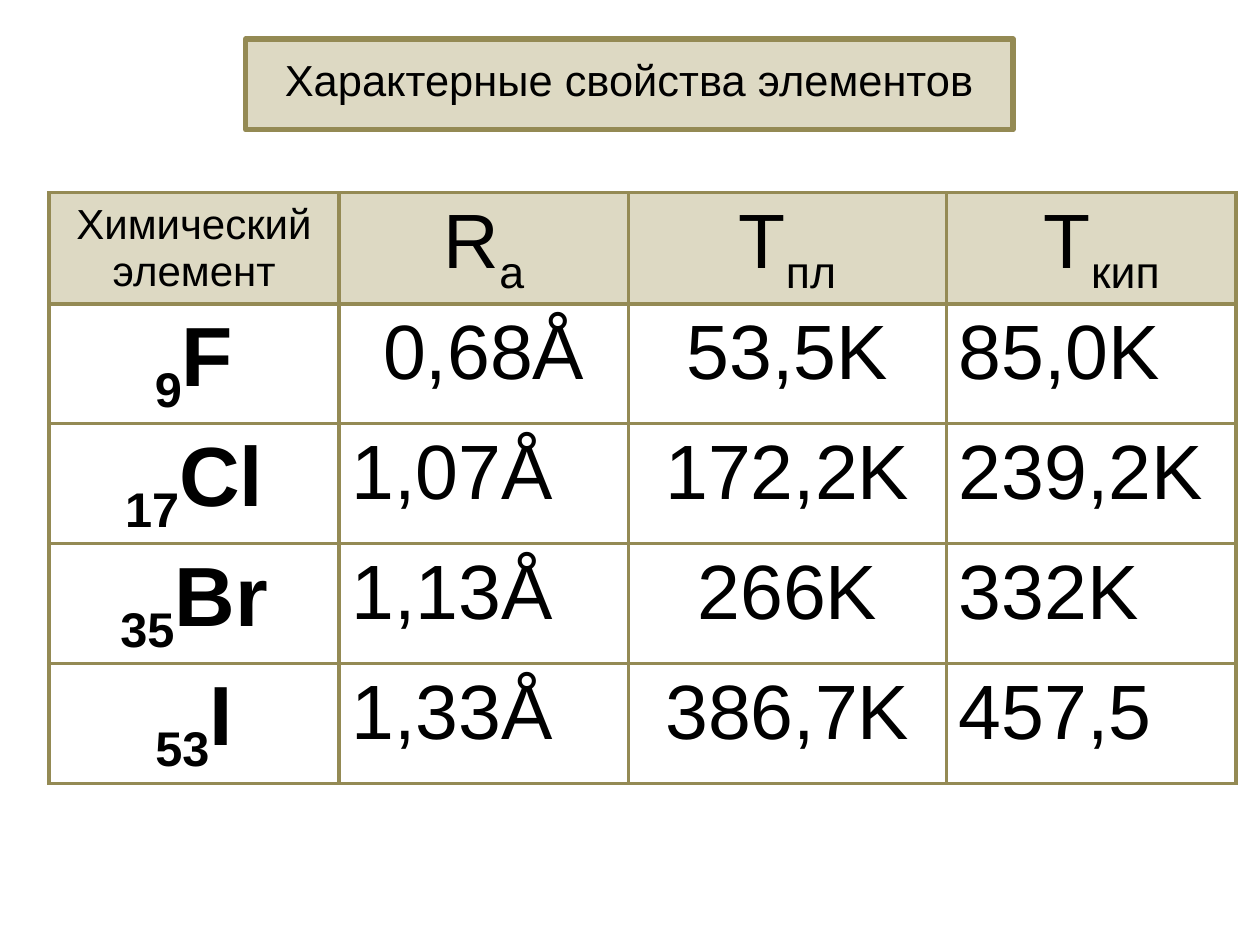
"""Build a slide with a table of the characteristic properties of the halogens."""

from dataclasses import dataclass

from lxml.etree import SubElement
from pptx import Presentation
from pptx.dml.color import RGBColor
from pptx.enum.text import MSO_ANCHOR, MSO_AUTO_SIZE, PP_ALIGN
from pptx.oxml.ns import qn
from pptx.slide import Slide
from pptx.table import _Cell
from pptx.util import Inches, Pt


@dataclass(frozen=True)
class Theme:
    font: str = "Arial"
    text: RGBColor = RGBColor(0x00, 0x00, 0x00)
    panel: RGBColor = RGBColor(0xDD, 0xD9, 0xC3)
    border: RGBColor = RGBColor(0x94, 0x8A, 0x54)
    title_size: float = 24.8
    label_size: float = 24
    value_size: float = 44
    symbol_size: float = 48
    title_line: float = 3
    table_line: float = 2.25


@dataclass(frozen=True)
class Fragment:
    text: str
    subscript: bool = False


@dataclass(frozen=True)
class CellContent:
    fragments: tuple[Fragment, ...]
    size: float
    bold: bool = False
    centered: bool = True
    header: bool = False


@dataclass(frozen=True)
class Halogen:
    number: str
    symbol: str
    radius: str
    melting: str
    boiling: str
    radius_centered: bool = False


THEME = Theme()
COLUMN_WIDTHS = (2.3, 2.3, 2.52, 2.3)
HEADER_HEIGHT = 0.88
ROW_HEIGHT = 0.95
QUANTITIES = (("R", "a"), ("Т", "пл"), (" Т", "кип"))
HALOGENS = (
    Halogen("9", "F", "0,68Å", "53,5K", "85,0K", radius_centered=True),
    Halogen("17", "Сl", "1,07Å", "172,2K", "239,2K"),
    Halogen("35", "Br", "1,13Å", "266K", "332K"),
    Halogen("53", "I", "1,33Å", "386,7K", "457,5"),
)


def header_row() -> list[CellContent]:
    """Describe the column headings."""
    label = CellContent((Fragment("Химический элемент"),), THEME.label_size, header=True)
    return [label] + [
        CellContent((Fragment(name), Fragment(index, True)), THEME.value_size, header=True)
        for name, index in QUANTITIES
    ]


def halogen_row(halogen: Halogen) -> list[CellContent]:
    """Describe the cells of one element."""
    size = THEME.value_size
    symbol = (Fragment(halogen.number, True), Fragment(halogen.symbol))
    return [
        CellContent(symbol, THEME.symbol_size, bold=True),
        CellContent((Fragment(halogen.radius),), size, centered=halogen.radius_centered),
        CellContent((Fragment(halogen.melting),), size),
        CellContent((Fragment(halogen.boiling),), size, centered=False),
    ]


def draw_borders(cell: _Cell) -> None:
    """Give a cell the same line on its four sides."""
    properties = cell._tc.get_or_add_tcPr()
    for position, side in enumerate(("lnL", "lnR", "lnT", "lnB")):
        line = SubElement(properties, qn(f"a:{side}"), w=str(Pt(THEME.table_line)))
        fill = SubElement(line, qn("a:solidFill"))
        SubElement(fill, qn("a:srgbClr"), val=str(THEME.border))
        properties.remove(line)
        properties.insert(position, line)


def fill_cell(cell: _Cell, content: CellContent) -> None:
    """Write and format one table cell."""
    if content.header:
        cell.fill.solid()
        cell.fill.fore_color.rgb = THEME.panel
        cell.vertical_anchor = MSO_ANCHOR.MIDDLE
    else:
        cell.fill.background()
    draw_borders(cell)
    paragraph = cell.text_frame.paragraphs[0]
    paragraph.alignment = PP_ALIGN.CENTER if content.centered else PP_ALIGN.LEFT
    paragraph.font.name = THEME.font
    paragraph.font.size = Pt(content.size)
    paragraph.font.bold = content.bold
    paragraph.font.color.rgb = THEME.text
    for fragment in content.fragments:
        run = paragraph.add_run()
        run.text = fragment.text
        run.font.name = THEME.font
        run.font.size = Pt(content.size)
        run.font.bold = content.bold
        run.font.color.rgb = THEME.text
        if fragment.subscript:
            run._r.get_or_add_rPr().set("baseline", "-25000")


def draw_title(slide: Slide) -> None:
    """Place the framed title."""
    title = slide.shapes.title
    title.left, title.top = Inches(1.95), Inches(0.31)
    title.width, title.height = Inches(6.09), Inches(0.72)
    title.fill.solid()
    title.fill.fore_color.rgb = THEME.panel
    title.line.color.rgb = THEME.border
    title.line.width = Pt(THEME.title_line)
    frame = title.text_frame
    frame.text = "Характерные свойства элементов"
    frame.auto_size = MSO_AUTO_SIZE.NONE
    frame.vertical_anchor = MSO_ANCHOR.MIDDLE
    paragraph = frame.paragraphs[0]
    paragraph.alignment = PP_ALIGN.CENTER
    paragraph.line_spacing = 0.8
    paragraph.font.name = THEME.font
    paragraph.font.size = Pt(THEME.title_size)
    paragraph.font.color.rgb = THEME.text


def draw_table(slide: Slide) -> None:
    """Place the table of properties."""
    rows = [header_row()] + [halogen_row(halogen) for halogen in HALOGENS]
    heights = [HEADER_HEIGHT] + [ROW_HEIGHT] * len(HALOGENS)
    table = slide.shapes.add_table(
        len(rows), len(COLUMN_WIDTHS), Inches(0.39), Inches(1.53),
        Inches(sum(COLUMN_WIDTHS)), Inches(sum(heights)),
    ).table
    for column, width in zip(table.columns, COLUMN_WIDTHS):
        column.width = Inches(width)
    for table_row, height, contents in zip(table.rows, heights, rows):
        table_row.height = Inches(height)
        for cell, content in zip(table_row.cells, contents):
            fill_cell(cell, content)


def main() -> None:
    """Create and save the presentation."""
    presentation = Presentation()
    presentation.slide_width, presentation.slide_height = Inches(10), Inches(7.5)
    slide = presentation.slides.add_slide(presentation.slide_layouts[5])
    draw_title(slide)
    draw_table(slide)
    presentation.save("out.pptx")


if __name__ == "__main__":
    main()
